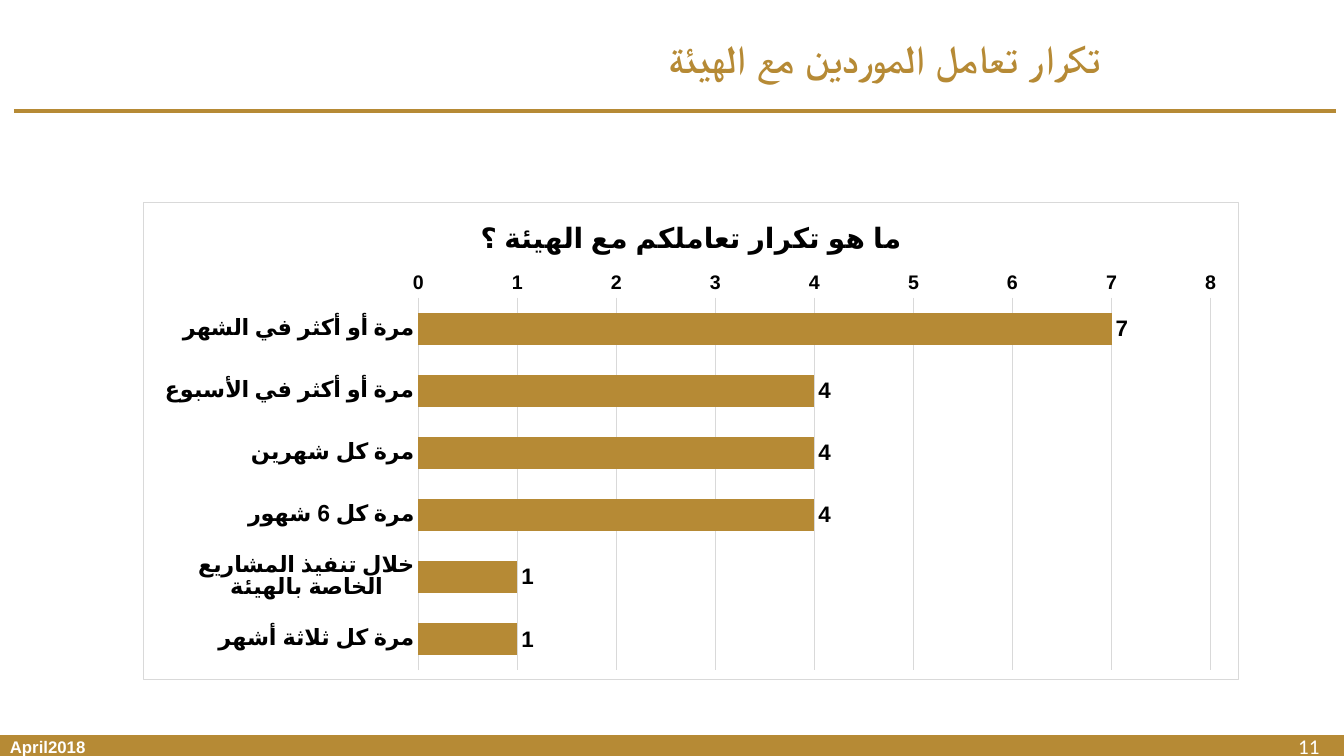
"""Build the slide on how often suppliers deal with the authority."""
import pptx
import pptx.chart.data
import pptx.dml.color
import pptx.enum.chart
import pptx.enum.shapes
import pptx.enum.text
import pptx.oxml
import pptx.oxml.ns
import pptx.util

Pt = pptx.util.Pt
GOLD = pptx.dml.color.RGBColor(0xB6, 0x8A, 0x35)
GRAY = pptx.dml.color.RGBColor(0xD9, 0xD9, 0xD9)
BLACK = pptx.dml.color.RGBColor(0, 0, 0)
WHITE = pptx.dml.color.RGBColor(0xFF, 0xFF, 0xFF)

ROWS = [
    ("مرة أو أكثر في الشهر", 7),
    ("مرة أو أكثر في الأسبوع", 4),
    ("مرة كل شهرين", 4),
    ("مرة كل 6 شهور", 4),
    ("خلال تنفيذ المشاريع الخاصة بالهيئة", 1),
    ("مرة كل ثلاثة أشهر", 1),
]


def style_font(font, size, color, bold=True, name="Arial"):
    font.name = name
    font.size = Pt(size)
    font.bold = bold
    font.color.rgb = color


def style_line(line, color, width):
    line.color.rgb = color
    line.width = Pt(width)


def set_rtl(para):
    para._p.get_or_add_pPr().set("rtl", "1")


def set_title(slide, text):
    title = slide.shapes.title
    title.left, title.top, title.width, title.height = map(Pt, (378.7, 12.2, 506.2, 57.6))
    frame = title.text_frame
    frame.text = text
    frame.auto_size = pptx.enum.text.MSO_AUTO_SIZE.NONE
    frame.vertical_anchor = pptx.enum.text.MSO_ANCHOR.MIDDLE
    para = frame.paragraphs[0]
    set_rtl(para)
    para.alignment = pptx.enum.text.PP_ALIGN.CENTER
    para.space_before = Pt(0)
    style_font(para.font, 28, GOLD)


def add_band(slide, left, top, width, height):
    band = slide.shapes.add_shape(
        pptx.enum.shapes.MSO_SHAPE.RECTANGLE, *map(Pt, (left, top, width, height)))
    band.shadow.inherit = False
    band.fill.solid()
    band.fill.fore_color.rgb = GOLD
    band.line.fill.background()


def add_rule(slide, left, right, top):
    rule = slide.shapes.add_connector(
        pptx.enum.shapes.MSO_CONNECTOR.STRAIGHT, *map(Pt, (left, top, right, top)))
    style_line(rule.line, GOLD, 3)
    props = rule._element.spPr
    props.append(props.makeelement(pptx.oxml.ns.qn("a:effectLst")))


def add_label(slide, text, left, top, width, size, bold, name):
    box = slide.shapes.add_textbox(*map(Pt, (left, top, width, 28.8)))
    box.text_frame.word_wrap = True
    box.text_frame.text = text
    style_font(box.text_frame.paragraphs[0].font, size, WHITE, bold, name)


def style_axis(axis, size):
    axis.major_tick_mark = pptx.enum.chart.XL_TICK_MARK.NONE
    axis.minor_tick_mark = pptx.enum.chart.XL_TICK_MARK.NONE
    style_font(axis.tick_labels.font, size, BLACK)


def add_border(chart):
    border = pptx.oxml.parse_xml(
        f'<c:spPr {pptx.oxml.ns.nsdecls("c", "a")}><a:noFill/><a:ln w="{Pt(0.75)}">'
        f'<a:solidFill><a:srgbClr val="{GRAY}"/></a:solidFill></a:ln></c:spPr>')
    chart.element.find(pptx.oxml.ns.qn("c:chart")).addnext(border)


def add_bars(slide, text, rows):
    data = pptx.chart.data.CategoryChartData()
    data.categories = [name for name, _ in rows]
    data.add_series("Series 1", [value for _, value in rows])
    chart = slide.shapes.add_chart(
        pptx.enum.chart.XL_CHART_TYPE.BAR_CLUSTERED,
        *map(Pt, (102.2, 144, 782.6, 342)), data).chart
    style_font(chart.font, 14, BLACK)
    add_border(chart)
    chart.has_legend = False
    chart.has_title = True
    frame = chart.chart_title.text_frame
    frame.text = text
    set_rtl(frame.paragraphs[0])
    style_font(frame.paragraphs[0].font, 20, BLACK)
    chart.chart_title.include_in_layout = False

    style_axis(chart.category_axis, 16)
    chart.category_axis.reverse_order = True
    style_line(chart.category_axis.format.line, GRAY, 0.75)
    scale = chart.value_axis
    style_axis(scale, 14)
    scale.minimum_scale, scale.maximum_scale, scale.major_unit = 0, 8, 1
    scale.format.line.fill.background()
    style_line(scale.major_gridlines.format.line, GRAY, 0.75)

    plot = chart.plots[0]
    plot.gap_width = 92
    plot.vary_by_categories = False
    plot.series[0].format.fill.solid()
    plot.series[0].format.fill.fore_color.rgb = GOLD
    plot.has_data_labels = True
    labels = plot.data_labels
    labels.show_value = True
    labels.position = pptx.enum.chart.XL_LABEL_POSITION.OUTSIDE_END
    style_font(labels.font, 16, BLACK)


def main():
    deck = pptx.Presentation()
    deck.slide_width, deck.slide_height = Pt(960), Pt(540)
    slide = deck.slides.add_slide(deck.slide_layouts.get_by_name("Title Only"))
    add_band(slide, 0, 525, 960, 15)
    add_label(slide, "11", 920.2, 520.6, 56.2, 15, False, "Calibri")
    add_rule(slide, 10, 954, 79.2)
    add_label(slide, "April2018", 0, 522.7, 152, 12, True, "Arial")
    set_title(slide, "تكرار تعامل الموردين مع الهيئة")
    add_bars(slide, "ما هو تكرار تعاملكم مع الهيئة ؟", ROWS)
    deck.save("out.pptx")


if __name__ == "__main__":
    main()
